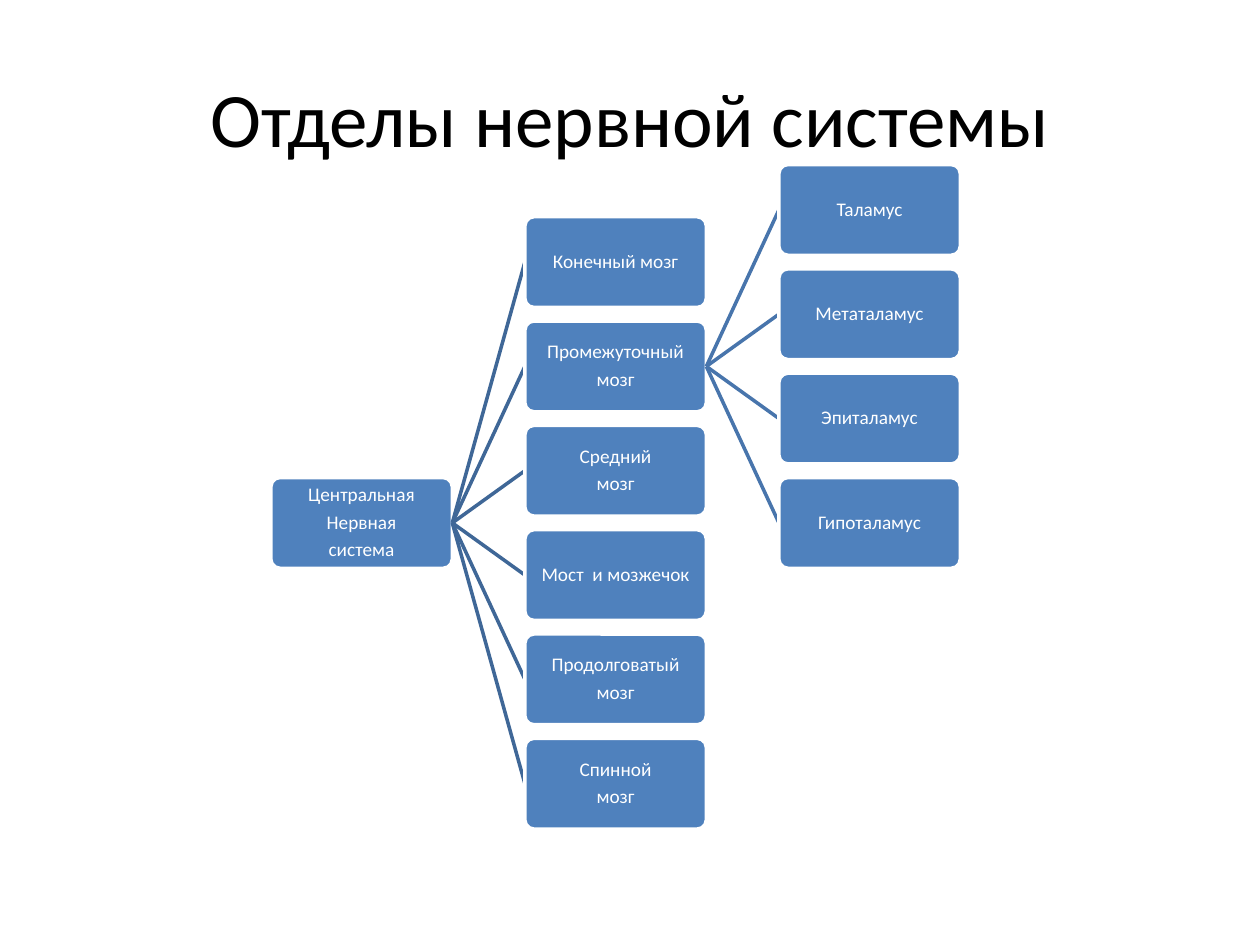
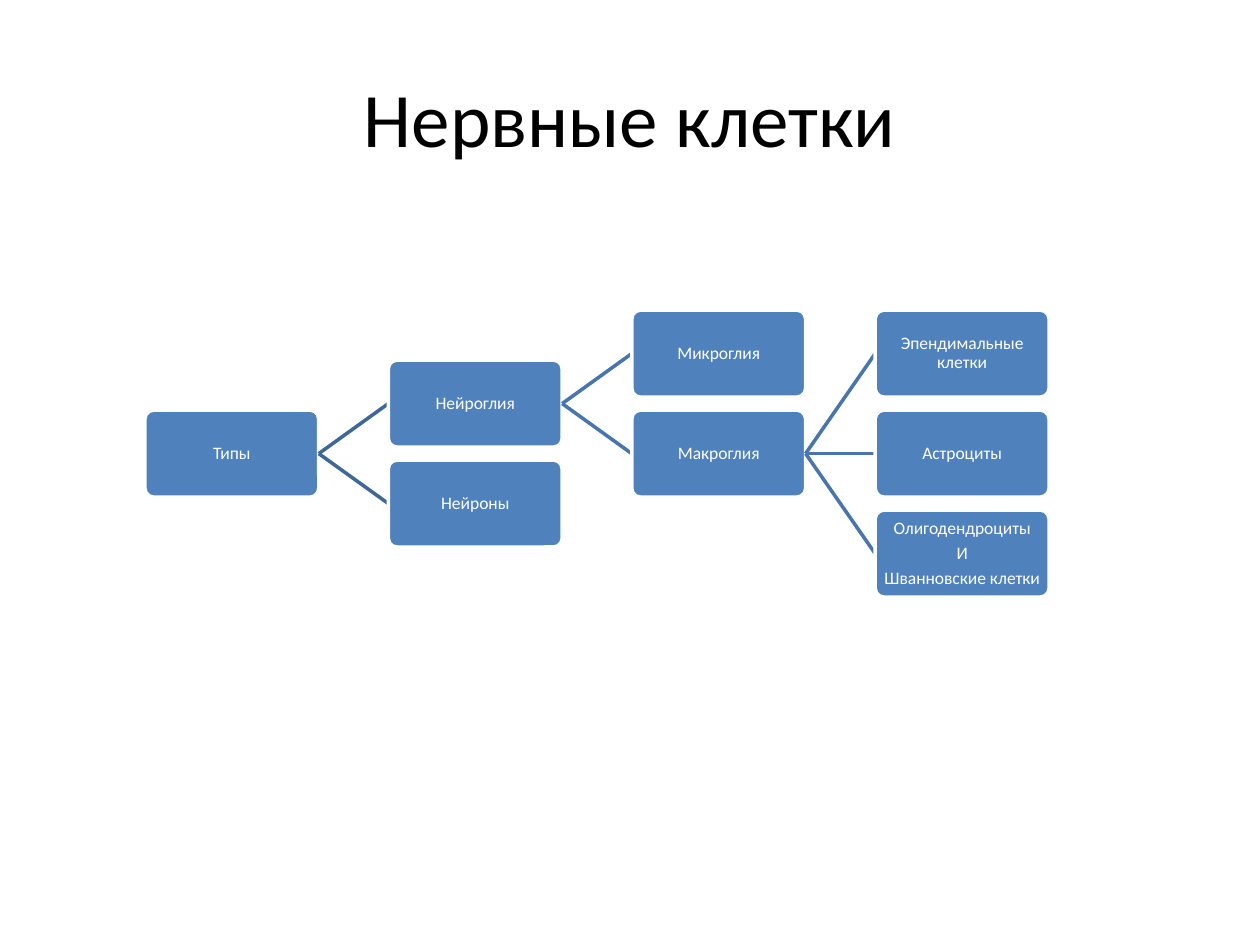
from lxml import etree
from pptx import Presentation
from pptx.dml.color import RGBColor as Rgb
from pptx.enum.shapes import MSO_CONNECTOR as Link, MSO_SHAPE as Shape
from pptx.enum.text import MSO_ANCHOR as Anchor, PP_ALIGN as Align
from pptx.oxml.ns import qn
from pptx.util import Inches, Pt

# Shared look
HUES = {"box": "4F81BD", "edge": "FFFFFF", "text": "FFFFFF",
        "title": "000000", "stem": "3F6797", "twig": "4875AC"}
FONT = "Calibri"
LINE = Pt(2)
PAD = Inches(0.01)

# Box grid, as shares of the box size
RATIO = 2        # width to height
COL = 1.4        # column step in box widths
ROW = 1.15       # row step in box heights

# Trees: (label, children); a line break starts a new paragraph
BRAIN = ("Центральная\nНервная\nсистема", [
    ("Конечный мозг", []),
    ("Промежуточный\nмозг", [
        ("Таламус", []),
        ("Метаталамус", []),
        ("Эпиталамус", []),
        ("Гипоталамус", []),
    ]),
    ("Средний\nмозг", []),
    ("Мост  и мозжечок", []),
    ("Продолговатый\nмозг", []),
    ("Спинной\nмозг", []),
])
CELLS = ("Типы", [
    ("Нейроглия", [
        ("Микроглия", []),
        ("Макроглия", [
            ("Эпендимальные клетки", []),
            ("Астроциты", []),
            ("Олигодендроциты\nИ\nШванновские клетки", []),
        ]),
    ]),
    ("Нейроны", []),
])


def hue(name):
    return Rgb.from_string(HUES[name])


def style(par, size, name):
    par.alignment = Align.CENTER
    for run in par.runs:
        run.font.name = FONT
        run.font.size = Pt(size)
        run.font.color.rgb = hue(name)


def add_title(slide, text):
    title = slide.shapes.title
    title.left, title.top = Inches(0.5), Inches(0.3)
    title.width, title.height = Inches(9), Inches(1.25)
    frame = title.text_frame
    frame.text = text
    frame.vertical_anchor = Anchor.MIDDLE
    style(frame.paragraphs[0], 44, "title")


def add_box(slide, label, left, mid, high, size):
    box = slide.shapes.add_shape(
        Shape.ROUNDED_RECTANGLE, Inches(left), Inches(mid - high / 2),
        Inches(high * RATIO), Inches(high))
    box.adjustments[0] = 0.1
    box.shadow.inherit = False
    box.fill.solid()
    box.fill.fore_color.rgb = hue("box")
    box.line.color.rgb = hue("edge")
    box.line.width = LINE
    frame = box.text_frame
    frame.word_wrap = True
    frame.vertical_anchor = Anchor.MIDDLE
    frame.margin_left = frame.margin_right = PAD
    frame.margin_top = frame.margin_bottom = PAD
    frame.text = label
    for par in frame.paragraphs:
        par.line_spacing = 0.9
        par.space_after = Pt(0.35 * size)
        style(par, size, "text")


def add_link(slide, start, end, name):
    link = slide.shapes.add_connector(
        Link.STRAIGHT, *(Inches(n) for n in start + end))
    link.line.color.rgb = hue(name)
    link.line.width = LINE
    etree.SubElement(link._element.spPr, qn("a:effectLst"))


def add_tree(slide, node, left, mid, high, size, depth=0):
    """Draw a box, then its children in the next column, centred on it."""
    label, kids = node
    add_box(slide, label, left, mid, high, size)
    wide = high * RATIO
    right, after = left + wide, left + wide * COL
    for i, kid in enumerate(kids):
        level = mid + (i - (len(kids) - 1) / 2) * high * ROW
        add_link(slide, (right, mid), (after, level),
                 "twig" if depth else "stem")
        add_tree(slide, kid, after, level, high, size, depth + 1)


def main():
    deck = Presentation()
    deck.slide_width, deck.slide_height = Inches(10), Inches(7.5)
    # Title, tree, root left, root middle, box height, text size
    pages = [
        ("Отделы нервной системы", BRAIN, 2.15, 4.15, 0.72, 11),
        ("Нервные клетки", CELLS, 1.15, 3.6, 0.69, 10),
    ]
    for title, *tree in pages:
        slide = deck.slides.add_slide(deck.slide_layouts[5])
        add_title(slide, title)
        add_tree(slide, *tree)
    deck.save("out.pptx")


if __name__ == "__main__":
    main()
